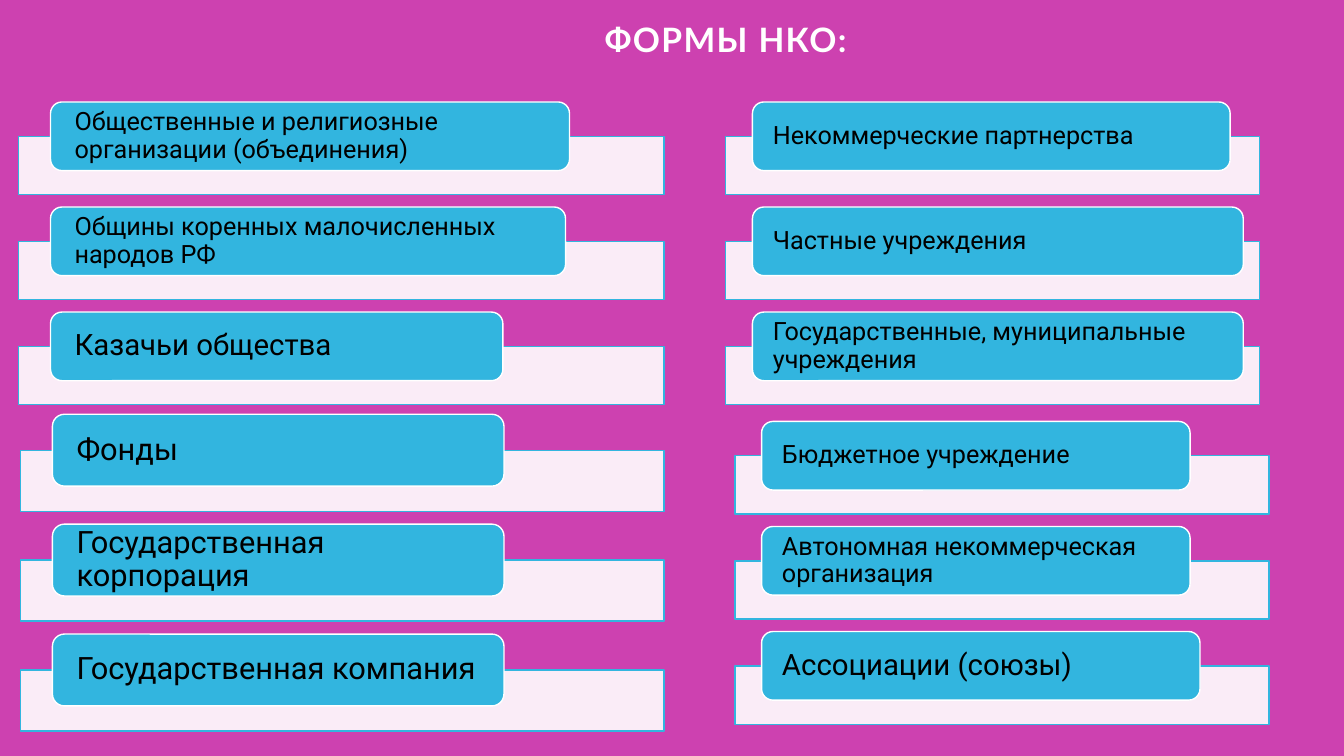
from lxml.etree import SubElement
from pptx import Presentation
from pptx.dml.color import RGBColor
from pptx.enum.shapes import MSO_SHAPE
from pptx.enum.text import MSO_ANCHOR, MSO_AUTO_SIZE, PP_ALIGN
from pptx.oxml.ns import qn
from pptx.util import Cm, Pt

MAGENTA, BLUE, WHITE, BLACK = "CD41B0", "32B5DF", "FFFFFF", "000000"

BLOCKS = [
    ((0.46, 2.57, 16.28, 1.73), [
        ("Общественные и религиозные организации (объединения)", 13.08, 18),
        ("Общины коренных малочисленных народов РФ", 12.98, 18),
        ("Казачьи общества", 11.4, 21)]),
    ((18.29, 2.57, 13.46, 1.73), [
        ("Некоммерческие партнерства", 12.04, 18),
        ("Частные учреждения", 12.37, 18),
        ("Государственные, муниципальные учреждения", 12.37, 18)]),
    ((0.51, 10.44, 16.23, 1.81), [
        ("Фонды", 11.38, 22),
        ("Государственная корпорация", 11.38, 22),
        ("Государственная компания", 11.38, 22)]),
    ((18.52, 10.62, 13.46, 1.73), [
        ("Бюджетное учреждение", 10.8, 18),
        ("Автономная некоммерческая организация", 10.8, 18),
        ("Ассоциации (союзы)", 11.05, 21)]),
]


def rgb(value):
    return RGBColor.from_string(value)


def set_attrs(target, values):
    for name, value in values.items():
        setattr(target, name, value)


def write(tf, text, font, color, frame, para):
    set_attrs(tf, frame)
    p = tf.paragraphs[0]
    set_attrs(p, para)
    r = p.add_run()
    r.text = text
    set_attrs(r.font, font)
    r.font.color.rgb = rgb(color)
    return r


def add_box(s, kind, box, fill, line):
    sp = s.shapes.add_shape(kind, *map(Cm, box))
    sp.shadow.inherit = False
    sp.fill.solid()
    sp.fill.fore_color.rgb = rgb(fill)
    sp.line.color.rgb = rgb(line)
    sp.line.width = Pt(1)
    return sp


def add_title(s, box):
    sp = s.shapes.title
    set_attrs(sp, dict(zip(("left", "top", "width", "height"), map(Cm, box))))
    r = write(sp.text_frame, "ФОРМЫ НКО:",
              {"name": "Lato", "size": Pt(24), "bold": True}, WHITE,
              {"word_wrap": True, "auto_size": MSO_AUTO_SIZE.NONE,
               "vertical_anchor": MSO_ANCHOR.MIDDLE,
               "margin_top": 0, "margin_bottom": 0},
              {"alignment": PP_ALIGN.CENTER, "line_spacing": 0.85,
               "space_before": Pt(0)})
    r.font._element.set("spc", "100")


def add_block(s, box, items):
    left, top, width, tab_height = box
    inset = Cm(0.032 * width)
    for i, (text, tab_width, size) in enumerate(items):
        y = top + i * 1.53 * tab_height
        bar = add_box(s, MSO_SHAPE.RECTANGLE,
                      (left, y + tab_height / 2, width, 0.85 * tab_height),
                      WHITE, BLUE)
        color = bar.fill._xPr.find(qn("a:solidFill"))[0]
        SubElement(color, qn("a:alpha")).set("val", "90000")
        tab = add_box(s, MSO_SHAPE.ROUNDED_RECTANGLE,
                      (left + 0.05 * width, y, tab_width, tab_height),
                      BLUE, WHITE)
        write(tab.text_frame, text, {"name": "Roboto", "size": Pt(size)}, BLACK,
              {"word_wrap": True, "vertical_anchor": MSO_ANCHOR.MIDDLE,
               "margin_left": inset, "margin_right": inset,
               "margin_top": 0, "margin_bottom": 0},
              {"alignment": PP_ALIGN.LEFT, "line_spacing": 0.9})


def main():
    prs = Presentation()
    prs.slide_width, prs.slide_height = Cm(33.87), Cm(19.05)
    s = prs.slides.add_slide(prs.slide_layouts[5])
    s.background.fill.solid()
    s.background.fill.fore_color.rgb = rgb(MAGENTA)
    add_title(s, (6.68, 0.5, 23.22, 1.12))
    for box, items in BLOCKS:
        add_block(s, box, items)
    prs.save("out.pptx")


if __name__ == "__main__":
    main()
